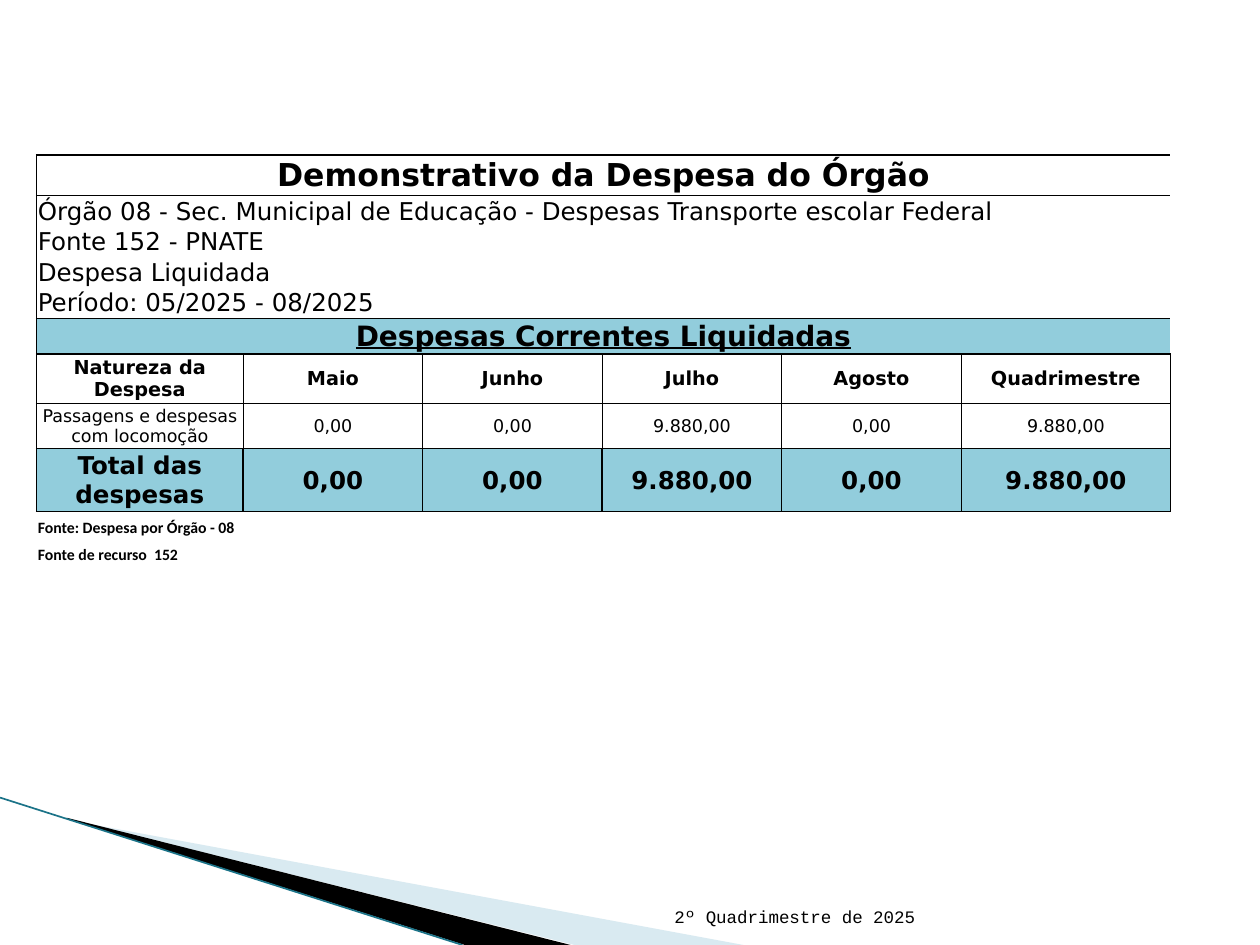
from lxml import etree
from pptx import Presentation, util as u
from pptx.dml.color import RGBColor
from pptx.enum import shapes, text
from pptx.oxml.ns import qn

COLORS = {"ink": "000000", "paper": "FFFFFF", "band": "92CDDC",
          "sweep": "A0CBDC", "edge": "1B7388"}
LEFT, CENTER, RIGHT = text.PP_ALIGN.LEFT, text.PP_ALIGN.CENTER, text.PP_ALIGN.RIGHT
TOP, MIDDLE, BOTTOM = (text.MSO_ANCHOR.TOP, text.MSO_ANCHOR.MIDDLE,
                       text.MSO_ANCHOR.BOTTOM)
MONTHS = ["0,00", "0,00", "9.880,00", "0,00", "9.880,00"]

# Each row: height, texts, font, alignment, anchor, fill,
# borders in points (outer sides, inner verticals, top, bottom)
INTRO = {"size": 14}
NOTE = {"size": 9, "bold": True, "name": "Calibri"}
ROWS = [
    (3.2, ["Demonstrativo da Despesa do Órgão"], {"size": 18, "bold": True},
     CENTER, MIDDLE, "paper", (1, 0, 1, 1)),
    (2.45, ["Órgão 08 - Sec. Municipal de Educação - Despesas Transporte escolar Federal"],
     INTRO, LEFT, BOTTOM, "paper", (1, 0, 1, 0)),
    (2.45, ["Fonte 152 - PNATE"], INTRO, LEFT, MIDDLE, "paper", (1, 0, 0, 0)),
    (2.45, ["Despesa Liquidada"], INTRO, LEFT, MIDDLE, "paper", (1, 0, 0, 0)),
    (2.45, ["Período: 05/2025 - 08/2025"], INTRO, LEFT, TOP, "paper", (1, 0, 0, 1)),
    (2.8, ["Despesas Correntes Liquidadas"],
     {"size": 16, "bold": True, "underline": True},
     CENTER, MIDDLE, "band", (1, 0, 1, 1)),
    (3.9, ["Natureza da Despesa", "Maio", "Junho", "Julho", "Agosto", "Quadrimestre"],
     {"size": 11, "bold": True}, CENTER, MIDDLE, "paper", (1, 0.5, 1, 0.5)),
    (3.6, ["Passagens e despesas com locomoção", *MONTHS], {"size": 10},
     CENTER, MIDDLE, "paper", (1, 0.5, 0.5, 1)),
    (5, ["Total das despesas", *MONTHS], {"size": 14, "bold": True},
     CENTER, MIDDLE, "band", (1, 1, 1, 1)),
    (2.1, ["Fonte: Despesa por Órgão - 08", *[""] * 5], NOTE,
     LEFT, BOTTOM, "paper", (0, 0, 1, 0)),
    (2.1, ["Fonte de recurso  152", *[""] * 5], NOTE,
     LEFT, BOTTOM, "paper", (0, 0, 0, 0)),
]


class ReportSlide:
    """Draws on one slide with a grid of 100 columns by 75 rows."""

    def __init__(self, deck):
        self.unit = deck.slide_width / 100
        self.slide = deck.slides.add_slide(deck.slide_layouts[6])
        self.font = {"name": "DejaVu Sans", "bold": False, "underline": False}

    def grid(self, *lengths):
        return [u.Emu(round(length * self.unit)) for length in lengths]

    def color(self, name):
        return RGBColor.from_string(COLORS[name])

    def set_wording(self, frame, wording, style, align):
        paragraph = frame.paragraphs[0]
        paragraph.alignment = align
        if not wording:
            # keeps an empty cell as low as its row
            paragraph._p.get_or_add_endParaRPr().set("sz", str(style["size"] * 100))
            return
        run = paragraph.add_run()
        run.text = wording
        for key, value in {**self.font, **style}.items():
            setattr(run.font, key, u.Pt(value) if key == "size" else value)
        run.font.color.rgb = self.color("ink")

    def wedge(self, points, fill, opacity=100):
        start, *others = [self.grid(*point) for point in points]
        builder = self.slide.shapes.build_freeform(*start, scale=1)
        builder.add_line_segments(others, close=True)
        shape = builder.convert_to_shape()
        shape.shadow.inherit = False
        shape.line.fill.background()
        shape.fill.solid()
        shape.fill.fore_color.rgb = self.color(fill)
        if opacity < 100:
            tint = shape._element.spPr.find(".//" + qn("a:srgbClr"))
            etree.SubElement(tint, qn("a:alpha"), val=str(opacity * 1000))

    def line(self, start, end, color, width):
        connector = self.slide.shapes.add_connector(
            shapes.MSO_CONNECTOR.STRAIGHT, *self.grid(*start, *end))
        connector.line.color.rgb = self.color(color)
        connector.line.width = u.Pt(width)
        etree.SubElement(connector._element.spPr, qn("a:effectLst"))

    def label(self, box, wording, style, align, anchor):
        frame = self.slide.shapes.add_textbox(*self.grid(*box)).text_frame
        frame.word_wrap = True
        frame.vertical_anchor = anchor
        self.set_wording(frame, wording, style, align)

    def borders(self, cell, widths):
        properties = cell._tc.get_or_add_tcPr()
        for side, width in zip("LRTB", widths):
            edge = etree.SubElement(properties, qn("a:ln" + side),
                                    w=str(u.Pt(width)))
            if width:
                paint = etree.SubElement(edge, qn("a:solidFill"))
                etree.SubElement(paint, qn("a:srgbClr"), val=COLORS["ink"])
            else:
                etree.SubElement(edge, qn("a:noFill"))

    def table(self, left, top, columns, rows):
        height = sum(row[0] for row in rows)
        table = self.slide.shapes.add_table(
            len(rows), len(columns),
            *self.grid(left, top, sum(columns), height)).table
        table.first_row = table.horz_banding = False
        for column, width in zip(table.columns, self.grid(*columns)):
            column.width = width
        last = len(columns) - 1
        margins = {"margin_left": 0.01, "margin_right": 0.01,
                   "margin_top": 0.01, "margin_bottom": 0}
        for r, (tall, words, style, align, anchor, fill, lines) in enumerate(rows):
            table.rows[r].height = self.grid(tall)[0]
            outer, inner, above, below = lines
            for c in range(last + 1):
                cell = table.cell(r, c)
                for key, inches in margins.items():
                    setattr(cell, key, u.Inches(inches))
                cell.vertical_anchor = anchor
                self.borders(cell, (inner if c else outer,
                                    inner if c < last else outer, above, below))
                cell.fill.solid()
                cell.fill.fore_color.rgb = self.color(fill)
                self.set_wording(cell.text_frame, words[c] if c < len(words) else "",
                                 style, align)
            if len(words) == 1:
                table.cell(r, 0).merge(table.cell(r, last))


def main():
    deck = Presentation()
    deck.slide_width, deck.slide_height = u.Inches(10), u.Inches(7.5)
    page = ReportSlide(deck)
    page.wedge([(5.5, 65.1), (59, 75), (45.6, 75), (5.5, 65)], "sweep", 40)
    page.wedge([(5.3, 64.9), (45.3, 75), (36.9, 75), (5.4, 65)], "ink")
    page.line((0, 63.3), (36.7, 75), "edge", 0.95)
    page.label((47.9, 70.1, 25.7, 4), "2º Quadrimestre de 2025",
               {"size": 10, "name": "Courier New"}, RIGHT, BOTTOM)
    page.table(2.9, 12.3, [16.4, *[14.25] * 4, 16.6], ROWS)
    deck.save("out.pptx")


if __name__ == "__main__":
    main()
